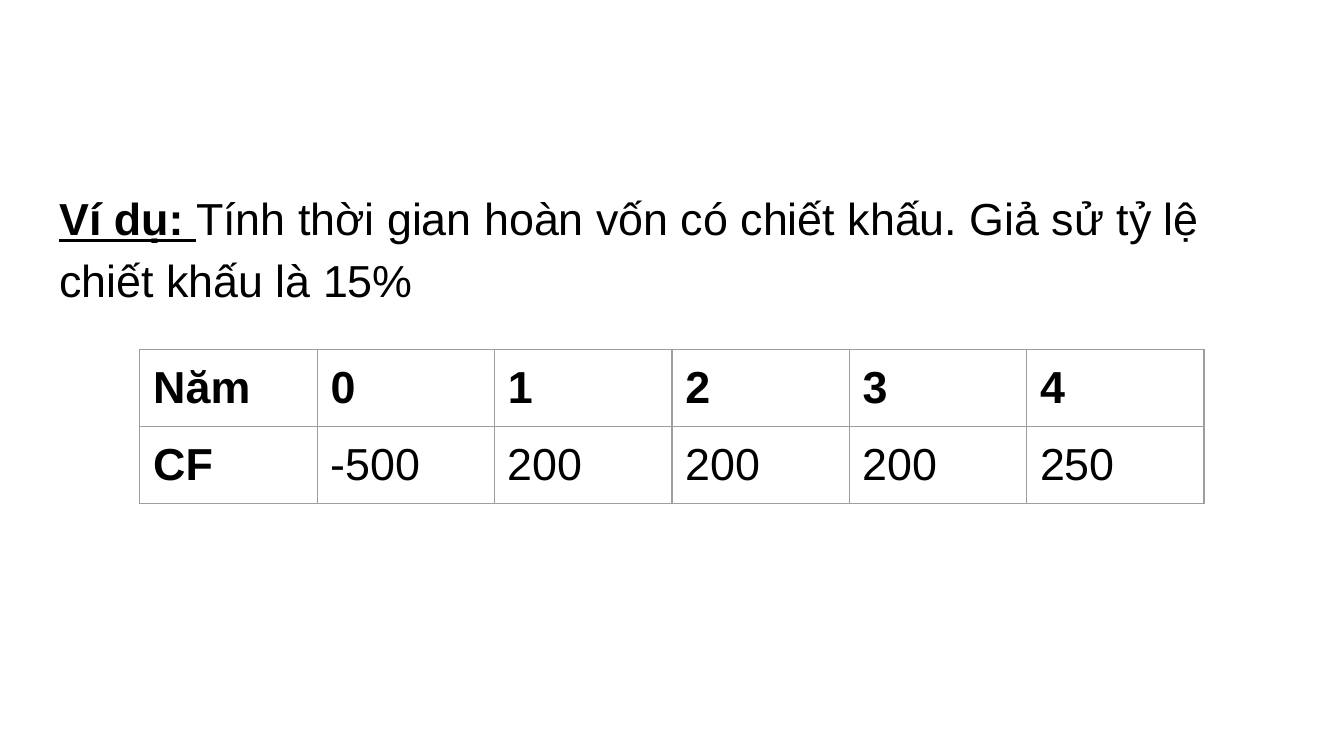
from lxml import etree
from pptx import Presentation
from pptx.dml.color import RGBColor
from pptx.enum.text import MSO_ANCHOR, MSO_AUTO_SIZE
from pptx.oxml.ns import qn
from pptx.util import Inches, Pt

TOP = MSO_ANCHOR.TOP
NO_FIT = MSO_AUTO_SIZE.NONE
COLORS = {"text": "000000", "border": "9E9E9E"}
FONT = "Arial"
SIZE = 24
INSET = 0.1
CASH_FLOWS = [
    ["Năm", "0", "1", "2", "3", "4"],
    ["CF", "-500", "200", "200", "200", "250"],
]


def set_font(p):
    p.font.name = FONT
    p.font.size = Pt(SIZE)
    p.font.color.rgb = RGBColor.from_string(COLORS["text"])


def set_insets(box):
    box.margin_left = box.margin_right = Inches(INSET)
    box.margin_top = box.margin_bottom = Inches(INSET)
    box.vertical_anchor = TOP


def set_borders(cell):
    tcPr = cell._tc.get_or_add_tcPr()
    for i, side in enumerate(("a:lnL", "a:lnR", "a:lnT", "a:lnB")):
        ln = etree.Element(qn(side), w=str(Pt(0.75)))
        fill = etree.SubElement(ln, qn("a:solidFill"))
        etree.SubElement(fill, qn("a:srgbClr"), val=COLORS["border"])
        tcPr.insert(i, ln)


def add_question(s, x, y, w, h):
    sp = s.placeholders[1]
    sp.left, sp.top, sp.width, sp.height = (Inches(v) for v in (x, y, w, h))
    tf = sp.text_frame
    tf.word_wrap = True
    tf.auto_size = NO_FIT
    set_insets(tf)
    p = tf.paragraphs[0]
    set_font(p)
    p.line_spacing = 1.15
    p.space_before = Pt(0)
    pPr = p._p.get_or_add_pPr()
    pPr.set("marL", "0")
    pPr.set("indent", "0")
    pPr.insert_element_before(
        etree.Element(qn("a:buNone")), "a:tabLst", "a:defRPr", "a:extLst"
    )
    r = p.add_run()
    r.text = "Ví dụ: "
    r.font.bold = r.font.underline = True
    r = p.add_run()
    r.text = "Tính thời gian hoàn vốn có chiết khấu. Giả sử tỷ lệ chiết khấu là 15%"


def add_cash_flow_table(s, x, y, w, h):
    table = s.shapes.add_table(
        len(CASH_FLOWS), len(CASH_FLOWS[0]),
        Inches(x), Inches(y), Inches(w), Inches(h),
    ).table
    table.first_row = table.horz_banding = False
    for i, row in enumerate(CASH_FLOWS):
        for j, value in enumerate(row):
            cell = table.cell(i, j)
            cell.text = value
            cell.fill.background()
            set_insets(cell)
            set_borders(cell)
            p = cell.text_frame.paragraphs[0]
            set_font(p)
            p.font.bold = i == 0 or j == 0


def main():
    prs = Presentation()
    prs.slide_width = Inches(10)
    prs.slide_height = prs.slide_width * 9 // 16
    s = prs.slides.add_slide(prs.slide_layouts[1])
    title = s.shapes.title._element
    title.getparent().remove(title)
    add_question(s, 0.34, 1.26, 9.32, 3.74)
    add_cash_flow_table(s, 1.04, 2.6, 7.92, 0.84)
    prs.save("out.pptx")


if __name__ == "__main__":
    main()
